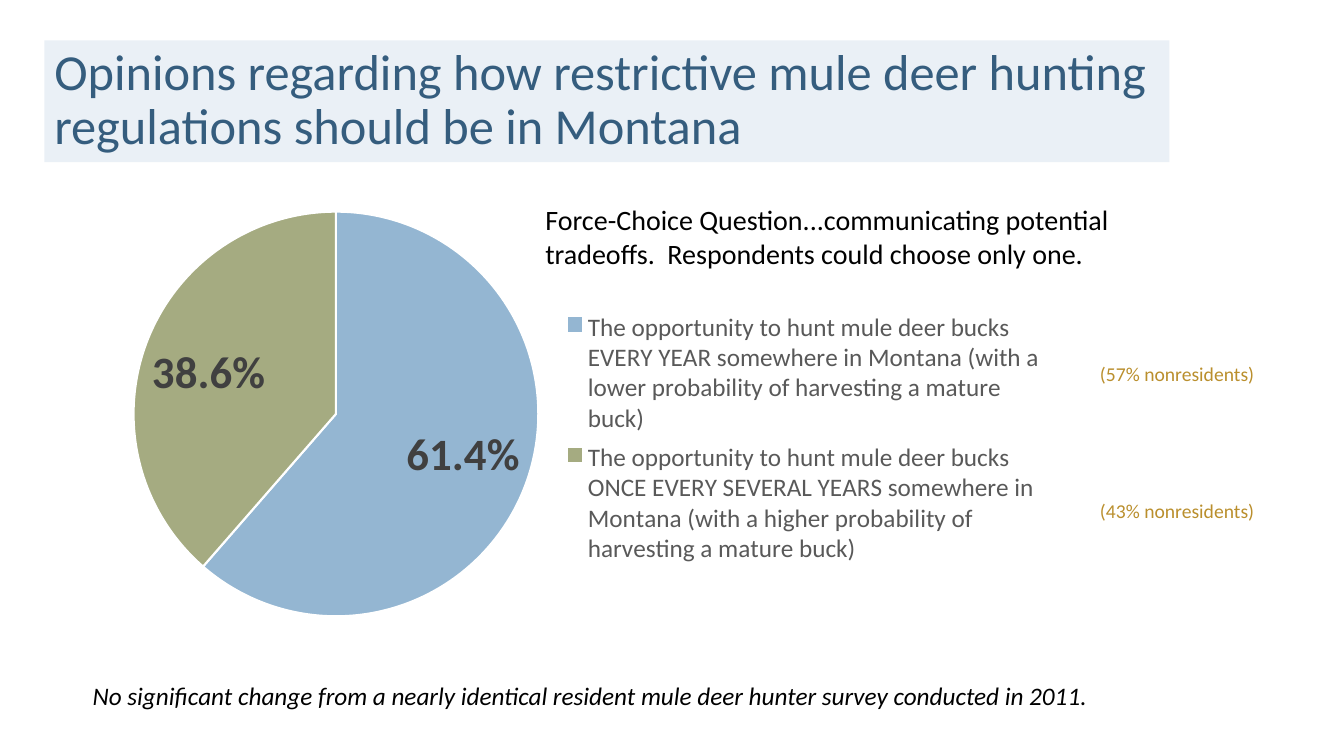
import pptx
import pptx.chart.data
import pptx.dml.color
import pptx.enum.chart
import pptx.enum.text
import pptx.util
from lxml import etree
from pptx.util import Inches

FONT = "Calibri"
SHARES = {
    "The opportunity to hunt mule deer bucks EVERY YEAR somewhere in Montana "
    "(with a lower probability of harvesting a mature buck)": (0.614, "94B6D2"),
    "The opportunity to hunt mule deer bucks ONCE EVERY SEVERAL YEARS somewhere in Montana "
    "(with a higher probability of harvesting a mature buck)": (0.386, "A5AB81"),
}


def color(value):
    return pptx.dml.color.RGBColor.from_string(value)


def format_font(font, size, hex_color, **styles):
    formats = {"name": FONT, "size": pptx.util.Pt(size), **styles}
    for name, value in formats.items():
        setattr(font, name, value)
    font.color.rgb = color(hex_color)


def add_text(page, text, place, size, hex_color, fill=None, spacing=None,
             margin_left=0.1, anchor=pptx.enum.text.MSO_ANCHOR.TOP, **styles):
    box = page.shapes.add_textbox(*map(Inches, place))
    if fill:
        box.fill.solid()
        box.fill.fore_color.rgb = color(fill)
    frame = box.text_frame
    formats = {"word_wrap": True, "vertical_anchor": anchor, "margin_left": Inches(margin_left)}
    for name, value in formats.items():
        setattr(frame, name, value)
    para = frame.paragraphs[0]
    para.line_spacing = spacing
    span = para.add_run()
    span.text = text
    format_font(span.font, size, hex_color, **styles)


def set_layout(part, left, top, width, height, inner=False):
    """Place a plot area or legend by fractions of the chart's size."""
    namespace = part.nsmap["c"]
    for old in part.findall(f"{{{namespace}}}layout"):
        part.remove(old)
    layout = etree.Element(f"{{{namespace}}}layout")
    manual = etree.SubElement(layout, f"{{{namespace}}}manualLayout")
    values = {"layoutTarget": "inner"} if inner else {}
    values |= {"xMode": "edge", "yMode": "edge", "x": left, "y": top, "w": width, "h": height}
    for name, value in values.items():
        etree.SubElement(manual, f"{{{namespace}}}{name}", val=str(value))
    position = part.find(f"{{{namespace}}}legendPos")
    if position is None:
        part.insert(0, layout)
    else:
        position.addnext(layout)


def add_pie(page, place):
    data = pptx.chart.data.CategoryChartData(number_format="0.0%")
    data.categories = list(SHARES)
    data.add_series("Series 1", [share for share, _ in SHARES.values()])
    chart = page.shapes.add_chart(
        pptx.enum.chart.XL_CHART_TYPE.PIE, *map(Inches, place), data).chart
    chart.has_title = False
    format_font(chart.font, 10, "000000")

    plot = chart.plots[0]
    plot.vary_by_categories = True
    for index, (_, fill) in enumerate(SHARES.values()):
        slice_format = plot.series[0].points[index].format
        slice_format.fill.solid()
        slice_format.fill.fore_color.rgb = color(fill)
        slice_format.line.color.rgb = color("FFFFFF")
        slice_format.line.width = pptx.util.Pt(1.5)

    labels = plot.series[0].data_labels
    formats = {
        "show_value": True, "show_percentage": False,
        "number_format": "0.0%", "number_format_is_linked": False,
        "position": pptx.enum.chart.XL_LABEL_POSITION.INSIDE_END,
    }
    for name, value in formats.items():
        setattr(labels, name, value)
    format_font(labels.font, 32, "404040", bold=True)

    chart.has_legend = True
    legend = chart.legend
    legend.position = pptx.enum.chart.XL_LEGEND_POSITION.BOTTOM
    legend.include_in_layout = False
    format_font(legend.font, 18, "595959")
    plot_area = chart.element.chart.plotArea
    set_layout(plot_area, 0.156, 0.209, 0.347, 0.708, inner=True)
    set_layout(legend._element, 0.52, 0.37, 0.42, 0.47)


def main():
    deck = pptx.Presentation()
    deck.slide_width, deck.slide_height = Inches(13.33), Inches(7.5)
    page = deck.slides.add_slide(deck.slide_layouts[6])

    add_text(page, "Opinions regarding how restrictive mule deer hunting regulations "
             "should be in Montana", (0.44, 0.4, 11.16, 1.21), 36, "355D7E",
             fill="EAF0F6", spacing=0.9, anchor=pptx.enum.text.MSO_ANCHOR.MIDDLE)
    add_text(page, "No significant change from a nearly identical resident mule deer "
             "hunter survey conducted in 2011.", (0.82, 6.7, 10.4, 0.4), 18, "000000",
             italic=True)
    add_pie(page, (-0.48, 0.91, 11.57, 5.68))
    for percent, top in ((57, 3.54), (43, 4.9)):
        add_text(page, f"({percent}% nonresidents)", (10.63, top, 2.24, 0.34), 14, "BA8F2D",
                 margin_left=0.28)
    add_text(page, "Force-Choice Question...communicating potential tradeoffs.  "
             "Respondents could choose only one.", (5.31, 1.96, 6.15, 0.77), 20, "000000")
    deck.save("out.pptx")


if __name__ == "__main__":
    main()
